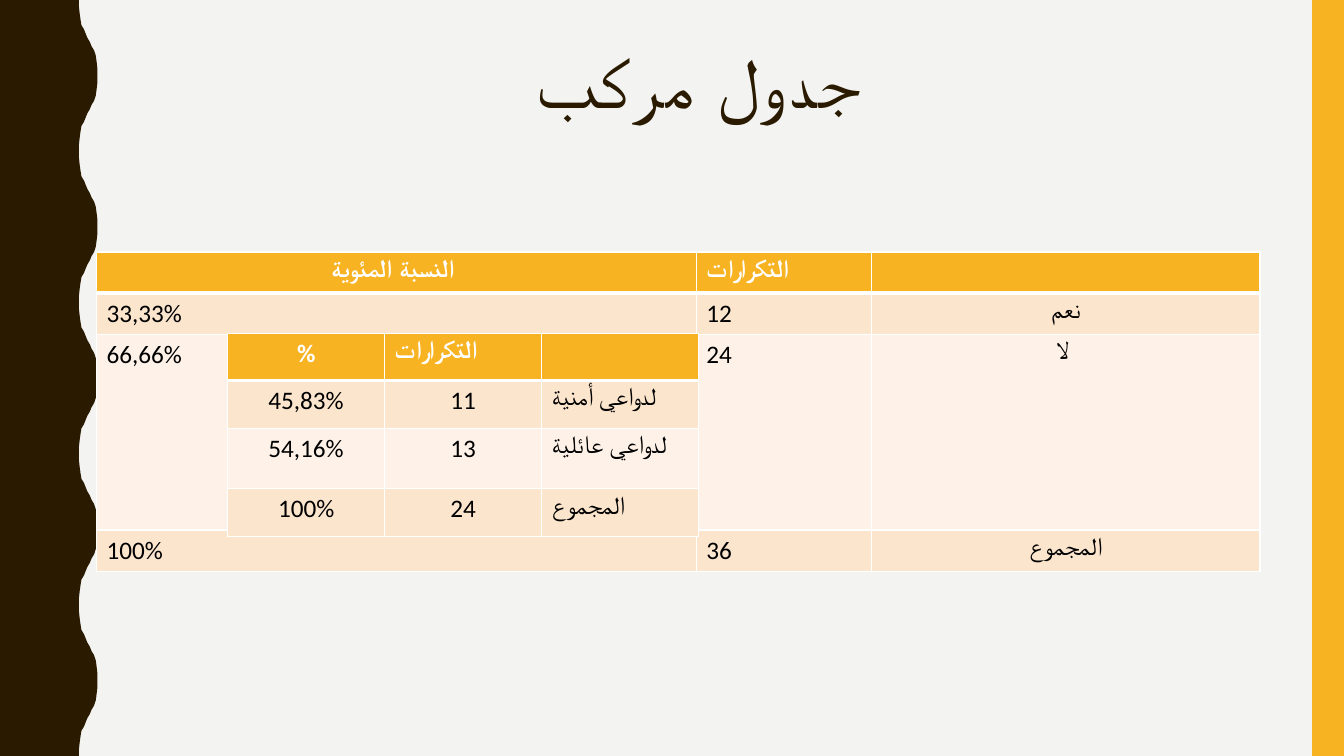
from dataclasses import dataclass

from lxml import etree
from pptx import Presentation
from pptx import util as u
from pptx.dml.color import RGBColor
from pptx.enum import shapes as shp, text as txt
from pptx.oxml import ns

BACKGROUND = RGBColor(0xF3, 0xF3, 0xF2)
BROWN = RGBColor(0x2A, 0x1A, 0x00)
AMBER = RGBColor(0xF8, 0xB3, 0x23)
DARK_BAND = RGBColor(0xFC, 0xE5, 0xCD)
LIGHT_BAND = RGBColor(0xFE, 0xF2, 0xE8)
WHITE = RGBColor(0xFF, 0xFF, 0xFF)
BLACK = RGBColor(0x00, 0x00, 0x00)

# The slide is a grid of 16 columns by 9 rows of square cells
COLUMNS, ROWS = 16, 9
UNIT = u.Inches(7.5) / ROWS


def grid(cells: float) -> u.Emu:
    return u.Emu(round(cells * UNIT))


@dataclass
class FrequencyTable:
    left: float
    top: float
    widths: list[float]
    heights: list[float]
    rows: list[list[str]]
    centred: set[tuple[int, int]]  # (row, column)


ANSWERS = FrequencyTable(
    1.15, 3, [7.14, 2.09, 4.62], [0.49, 0.49, 2.33, 0.49],
    [["النسبة المئوية ", "التكرارات", ""],
     ["33,33%", "12", "نعم"],
     ["66,66%", "24", "لا "],
     ["100%", "36", "المجموع"]],
    {(0, 0), (1, 2), (2, 2), (3, 2)})

REASONS = FrequencyTable(
    2.71, 3.97, [1.87] * 3, [0.56, 0.57, 0.72, 0.57],
    [["%", "التكرارات", ""],
     ["45,83%", "11", "لدواعي أمنية"],
     ["54,16%", "13", "لدواعي عائلية"],
     ["100%", "24", "المجموع"]],
    {(0, 0)} | {(row, column) for row in (1, 2, 3) for column in (0, 1)})


def paint(shape, colour: RGBColor) -> None:
    shape.shadow.inherit = False
    shape.fill.solid()
    shape.fill.fore_color.rgb = colour
    shape.line.fill.background()


def draw_wave(slide) -> None:
    half = 0.9
    rise = [(0.94, 0), (0.94, 0.08), (0.95, 0.17), (0.96, 0.24), (0.97, 0.3),
            (1, 0.35), (1.02, 0.4), (1.04, 0.45), (1.07, 0.5), (1.09, 0.55),
            (1.12, 0.6), (1.14, 0.66), (1.15, 0.73), (1.16, 0.82), (1.16, half)]
    fall = [(x, half - y) for x, y in reversed(rise)]
    edge = [(grid(x), grid(y + half * step))
            for step in range(10)
            for x, y in (fall if step % 2 else rise)[1:]]
    outline = slide.shapes.build_freeform(0, 0)
    outline.add_line_segments([(grid(0.94), 0), *edge, (0, grid(ROWS))])
    paint(outline.convert_to_shape(), BROWN)


def draw_border(cell, bottom: float) -> None:
    properties = cell._tc.get_or_add_tcPr()
    widths = {"a:lnL": 1, "a:lnR": 1, "a:lnT": 1, "a:lnB": bottom}
    for place, (side, width) in enumerate(widths.items()):
        line = etree.Element(ns.qn(side), w=str(u.Pt(width)))
        fill = etree.SubElement(line, ns.qn("a:solidFill"))
        etree.SubElement(fill, ns.qn("a:srgbClr"), val=str(WHITE))
        properties.insert(place, line)


def draw_table(slide, spec: FrequencyTable) -> None:
    table = slide.shapes.add_table(
        len(spec.rows), len(spec.widths), grid(spec.left), grid(spec.top),
        grid(sum(spec.widths)), grid(sum(spec.heights))).table
    for column, width in zip(table.columns, spec.widths):
        column.width = grid(width)
    for r, (height, words) in enumerate(zip(spec.heights, spec.rows)):
        table.rows[r].height = grid(height)
        header = r == 0
        band = AMBER if header else DARK_BAND if r % 2 else LIGHT_BAND
        for c, word in enumerate(words):
            cell = table.cell(r, c)
            cell.fill.solid()
            cell.fill.fore_color.rgb = band
            draw_border(cell, 3 if header else 1)
            paragraph = cell.text_frame.paragraphs[0]
            paragraph.text = word
            centred = (r, c) in spec.centred
            paragraph.alignment = txt.PP_ALIGN.CENTER if centred else txt.PP_ALIGN.LEFT
            for run in paragraph.runs:
                run.font.name, run.font.size = "Calibri", u.Pt(18)
                run.font.bold = header
                run.font.color.rgb = WHITE if header else BLACK


def draw_title(slide) -> None:
    title = slide.shapes.add_textbox(grid(1.64), grid(0.5), grid(13.36), grid(1.96))
    frame = title.text_frame
    frame.word_wrap = True
    frame.vertical_anchor = txt.MSO_ANCHOR.TOP
    frame.text = "جدول مركب"
    paragraph = frame.paragraphs[0]
    paragraph.alignment = txt.PP_ALIGN.CENTER
    paragraph.line_spacing = 0.9
    run = paragraph.runs[0]
    run.font.name, run.font.size = "Arial Narrow", u.Pt(51)
    run.font.color.rgb = BROWN
    run.font._element.set("spc", "200")


def main() -> None:
    deck = Presentation()
    deck.slide_width, deck.slide_height = grid(COLUMNS), grid(ROWS)
    slide = deck.slides.add_slide(deck.slide_layouts[6])
    slide.background.fill.solid()
    slide.background.fill.fore_color.rgb = BACKGROUND

    # Side decorations
    draw_wave(slide)
    band_width = 0.38
    paint(slide.shapes.add_shape(
        shp.MSO_SHAPE.RECTANGLE, grid(COLUMNS - band_width), 0,
        grid(band_width), grid(ROWS)), AMBER)

    # Title, then the reasons nested over the answers
    draw_title(slide)
    for spec in (ANSWERS, REASONS):
        draw_table(slide, spec)
    deck.save("out.pptx")


if __name__ == "__main__":
    main()
